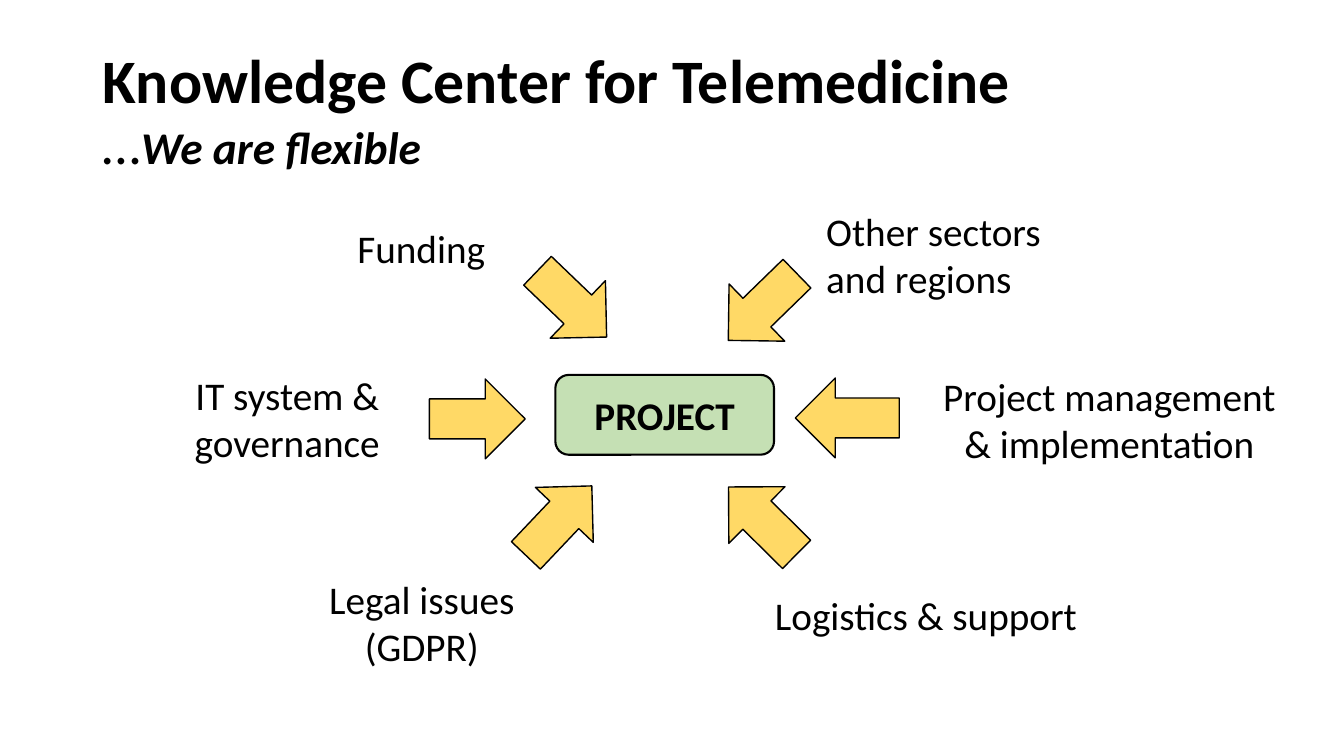
from typing import NamedTuple

from pptx import Presentation
from pptx.dml.color import RGBColor
from pptx.enum import shapes, text
from pptx.util import Pt

FONT = "Calibri"
BLACK, WHITE, GREEN, YELLOW = "000000", "FFFFFF", "C5E0B4", "FFD966"
HEIGHT = 57
LEFT, CENTER, RIGHT = text.PP_ALIGN.LEFT, text.PP_ALIGN.CENTER, text.PP_ALIGN.RIGHT


class Box(NamedTuple):
    wording: str
    left: float
    top: float
    width: float
    align: text.PP_ALIGN = CENTER
    fill: str = WHITE
    line: str = WHITE
    line_width: float = 1
    bold: bool = False


class Arrow(NamedTuple):
    left: float
    top: float
    angle: float
    width: float = 68.4


BOXES = [
    Box("PROJECT", 396.7, 267.8, 156.2, fill=GREEN, line=BLACK, line_width=1.5, bold=True),
    Box("Funding", 169.2, 148.3, 187.2, RIGHT),
    Box("IT system & governance", 111.6, 270, 187.2),
    Box("Legal issues (GDPR)", 205.2, 416.2, 192.2),
    Box("Other sectors\nand regions", 580.3, 153.4, 274.3, LEFT),
    Box("Project management & implementation", 658.8, 270.7, 267.1),
    Box("Logistics & support", 527.8, 410.4, 267.1),
]

ARROWS = [
    Arrow(374.4, 188.6, 43.8),
    Arrow(306.7, 270.7, 0),
    Arrow(365, 343.4, 313.5),
    Arrow(510.5, 190.8, 135.8),
    Arrow(568.1, 270, 180, 74.2),
    Arrow(510.5, 343.4, 224.7),
]


def color(value: str) -> RGBColor:
    return RGBColor.from_string(value)


def format_run(run, size: float, bold: bool = False, italic: bool = False) -> None:
    run.font.name = FONT
    run.font.size = Pt(size)
    run.font.bold = bold
    run.font.italic = italic
    run.font.color.rgb = color(BLACK)


def add_outlined(slide, kind, left: float, top: float, width: float,
                 fill: str, line: str, line_width: float):
    outlined = slide.shapes.add_shape(kind, Pt(left), Pt(top), Pt(width), Pt(HEIGHT))
    outlined.shadow.inherit = False
    outlined.fill.solid()
    outlined.fill.fore_color.rgb = color(fill)
    outlined.line.color.rgb = color(line)
    outlined.line.width = Pt(line_width)
    return outlined


def draw_box(slide, box: Box) -> None:
    topic = add_outlined(slide, shapes.MSO_SHAPE.ROUNDED_RECTANGLE, box.left, box.top,
                         box.width, box.fill, box.line, box.line_width)
    frame = topic.text_frame
    frame.word_wrap = True
    frame.vertical_anchor = text.MSO_ANCHOR.MIDDLE
    frame.text = box.wording
    for paragraph in frame.paragraphs:
        paragraph.alignment = box.align
        for run in paragraph.runs:
            format_run(run, 28, box.bold)


def draw_arrow(slide, arrow: Arrow) -> None:
    pointer = add_outlined(slide, shapes.MSO_SHAPE.RIGHT_ARROW, arrow.left, arrow.top,
                           arrow.width, YELLOW, BLACK, 1)
    pointer.rotation = arrow.angle


def write_title(slide) -> None:
    title = slide.shapes.title
    title.left, title.top, title.width, title.height = Pt(66.2), Pt(28.8), Pt(828), Pt(104.4)
    frame = title.text_frame
    frame.word_wrap = True
    frame.auto_size = text.MSO_AUTO_SIZE.NONE
    frame.vertical_anchor = text.MSO_ANCHOR.MIDDLE
    heading = frame.paragraphs[0]
    heading.text = "Knowledge Center for Telemedicine\v…"
    heading.alignment = LEFT
    heading.line_spacing = 0.9
    name, ellipsis = heading.runs
    motto = heading.add_run()
    motto.text = "We are flexible"
    format_run(name, 44.1, bold=True)
    format_run(ellipsis, 39.6)
    format_run(motto, 32.4, bold=True, italic=True)


def main() -> None:
    deck = Presentation()
    deck.slide_width, deck.slide_height = Pt(960), Pt(540)
    slide = deck.slides.add_slide(deck.slide_layouts[5])
    write_title(slide)
    for box in BOXES:
        draw_box(slide, box)
    for arrow in ARROWS:
        draw_arrow(slide, arrow)
    deck.save("out.pptx")


if __name__ == "__main__":
    main()
